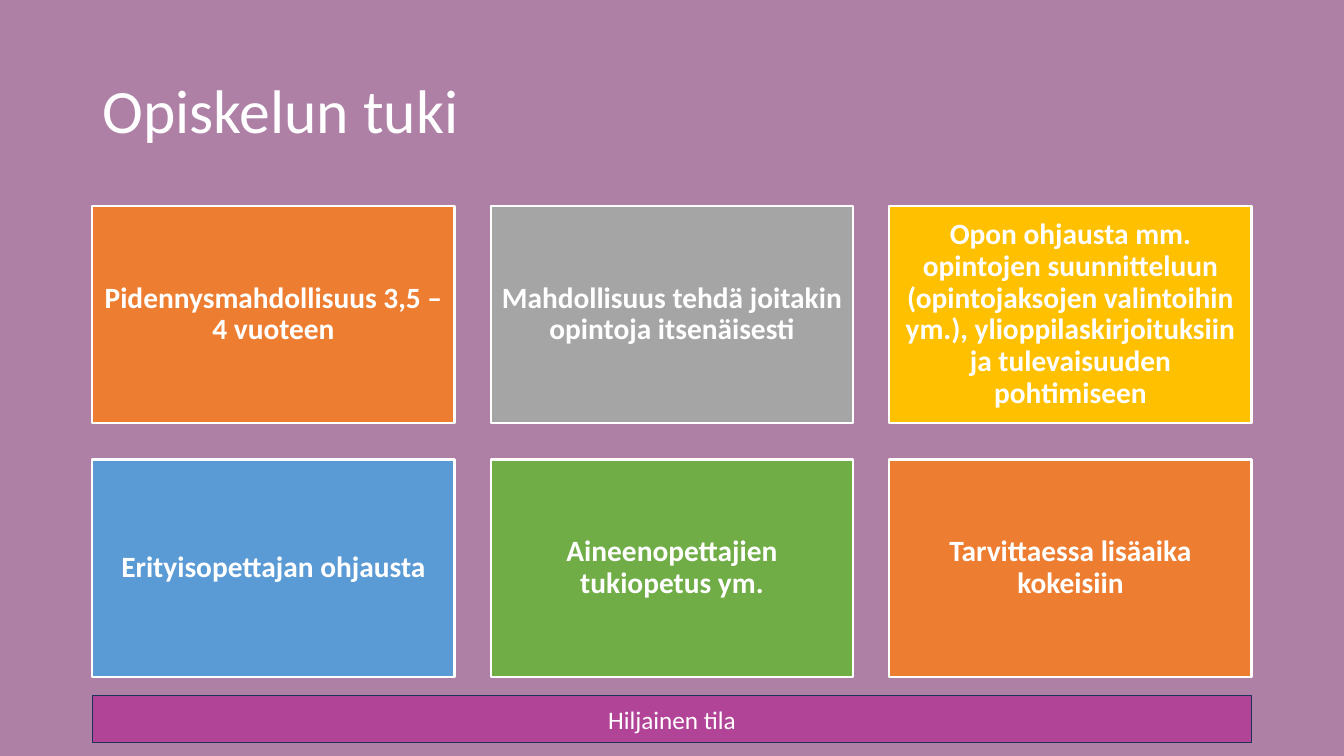
from dataclasses import dataclass

from pptx import Presentation
from pptx.dml.color import RGBColor
from pptx.enum.shapes import MSO_SHAPE
from pptx.enum.text import MSO_ANCHOR, PP_ALIGN
from pptx.util import Pt

# Content
TITLE = "Opiskelun tuki"
SUPPORT_FORMS = [
    ("Pidennysmahdollisuus 3,5 – 4 vuoteen", "ED7D31"),
    ("Mahdollisuus tehdä joitakin opintoja itsenäisesti", "A5A5A5"),
    ("Opon ohjausta mm. opintojen suunnitteluun (opintojaksojen valintoihin "
     "ym.), ylioppilaskirjoituksiin ja tulevaisuuden pohtimiseen", "FFC000"),
    ("Erityisopettajan ohjausta", "5B9BD5"),
    ("Aineenopettajien tukiopetus ym.", "70AD47"),
    ("Tarvittaessa lisäaika kokeisiin", "ED7D31"),
]
QUIET_SPACE = "Hiljainen tila"


@dataclass(frozen=True)
class Theme:
    font: str = "Calibri"
    background: str = "AE80A6"
    text: str = "FFFFFF"
    card_line: str = "FFFFFF"
    bar_fill: str = "B24498"
    bar_line: str = "1E3256"
    title_size: float = 44
    card_size: float = 21
    bar_size: float = 18


THEME = Theme()

# Layout in points
SLIDE_WIDTH, SLIDE_HEIGHT = 960, 540
LEFT, CONTENT_WIDTH = 66, 828
COLUMNS = 3
CARD_TOP, CARD_HEIGHT, CARD_GAP = 147, 155.3, 25.9
CARD_WIDTH = (CONTENT_WIDTH - (COLUMNS - 1) * CARD_GAP) / COLUMNS
CARD_INSET = 6.3


def write_text(shape, text, *, size, bold=False, align=PP_ALIGN.CENTER,
               line_spacing=1.0, inset=None):
    frame = shape.text_frame
    frame.word_wrap = True
    frame.vertical_anchor = MSO_ANCHOR.MIDDLE
    if inset is not None:
        frame.margin_left = frame.margin_right = Pt(inset)
        frame.margin_top = frame.margin_bottom = Pt(inset)
    paragraph = frame.paragraphs[0]
    paragraph.alignment = align
    paragraph.line_spacing = line_spacing
    run = paragraph.add_run()
    run.text = text
    run.font.name = THEME.font
    run.font.size = Pt(size)
    run.font.bold = bold
    run.font.color.rgb = RGBColor.from_string(THEME.text)


def add_box(slide, left, top, width, height, fill, line, line_width):
    shape = slide.shapes.add_shape(
        MSO_SHAPE.RECTANGLE, Pt(left), Pt(top), Pt(width), Pt(height))
    shape.shadow.inherit = False
    shape.fill.solid()
    shape.fill.fore_color.rgb = RGBColor.from_string(fill)
    shape.line.color.rgb = RGBColor.from_string(line)
    shape.line.width = Pt(line_width)
    return shape


def main():
    presentation = Presentation()
    presentation.slide_width = Pt(SLIDE_WIDTH)
    presentation.slide_height = Pt(SLIDE_HEIGHT)
    slide = presentation.slides.add_slide(presentation.slide_layouts[5])
    slide.background.fill.solid()
    slide.background.fill.fore_color.rgb = RGBColor.from_string(THEME.background)

    # Title
    title = slide.shapes.title
    title.left, title.top = Pt(LEFT), Pt(28.75)
    title.width, title.height = Pt(CONTENT_WIDTH), Pt(104.4)
    write_text(title, TITLE, size=THEME.title_size, align=PP_ALIGN.LEFT,
               line_spacing=0.9)

    # Grid of support forms
    for index, (text, fill) in enumerate(SUPPORT_FORMS):
        row, column = divmod(index, COLUMNS)
        card = add_box(slide, LEFT + column * (CARD_WIDTH + CARD_GAP),
                       CARD_TOP + row * (CARD_HEIGHT + CARD_GAP),
                       CARD_WIDTH, CARD_HEIGHT, fill, THEME.card_line, 1.5)
        write_text(card, text, size=THEME.card_size, bold=True,
                   line_spacing=0.9, inset=CARD_INSET)

    # Quiet space bar
    bar = add_box(slide, LEFT, 496.8, CONTENT_WIDTH, 33.8,
                  THEME.bar_fill, THEME.bar_line, 1)
    write_text(bar, QUIET_SPACE, size=THEME.bar_size)

    presentation.save("out.pptx")


if __name__ == "__main__":
    main()
